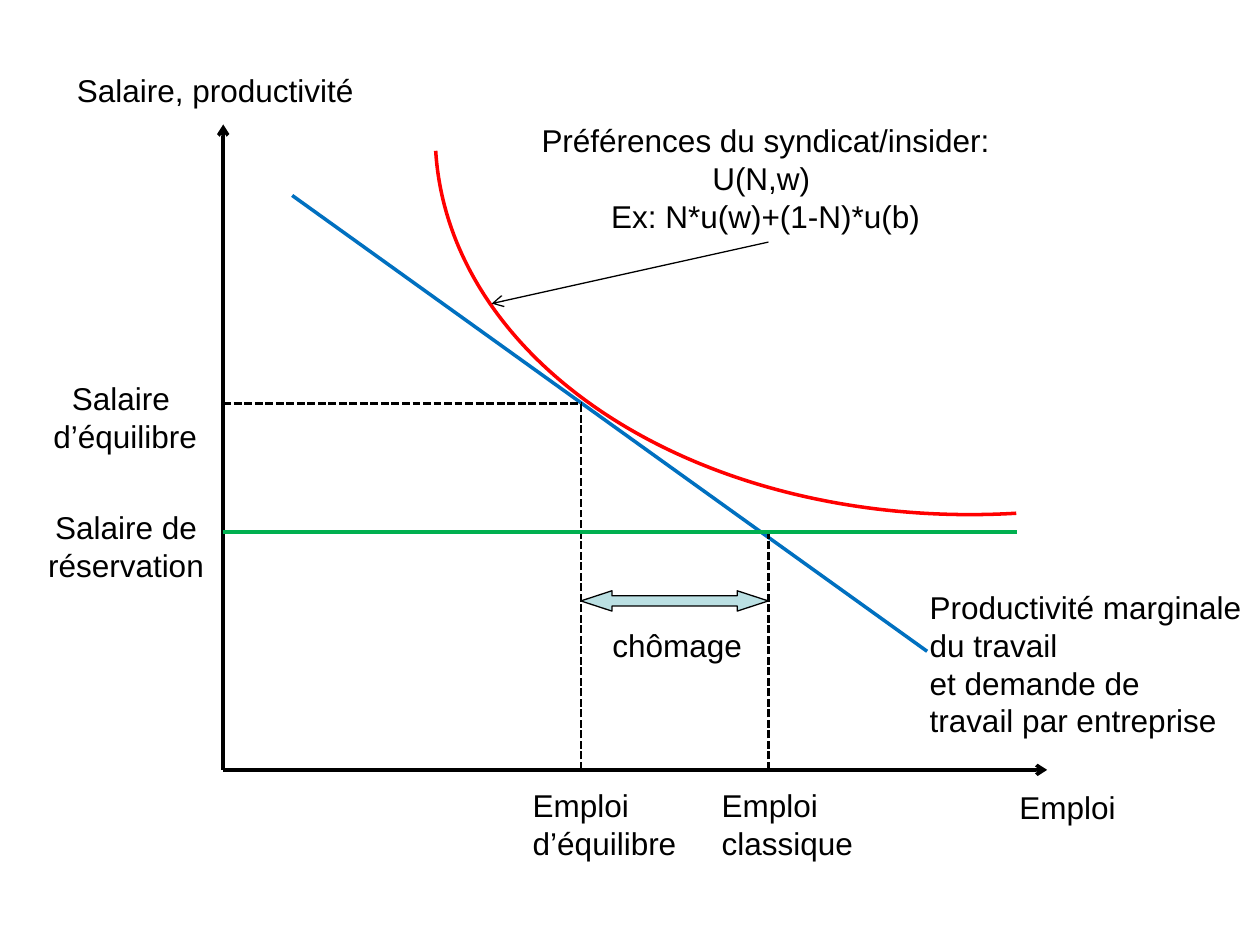
from dataclasses import dataclass

from lxml.etree import SubElement
from pptx import Presentation
from pptx.dml.color import RGBColor
from pptx.enum.dml import MSO_LINE
from pptx.enum.shapes import MSO_CONNECTOR, MSO_SHAPE
from pptx.enum.text import MSO_AUTO_SIZE, PP_ALIGN
from pptx.oxml.ns import qn
from pptx.util import Cm, Pt


@dataclass(frozen=True)
class Theme:
    ink: RGBColor = RGBColor(0, 0, 0)
    productivity: RGBColor = RGBColor(0x00, 0x70, 0xC0)
    preferences: RGBColor = RGBColor(0xFF, 0x00, 0x00)
    reservation: RGBColor = RGBColor(0x00, 0xB0, 0x50)
    unemployment: RGBColor = RGBColor(0xBB, 0xE0, 0xE3)
    font: str = "Arial"
    label_size: Pt = Pt(18)
    thick: Pt = Pt(2)
    dashed: Pt = Pt(1.5)
    thin: Pt = Pt(0.75)


theme = Theme()
deck = Presentation()
deck.slide_width, deck.slide_height = Cm(25.4), Cm(19.05)
page = deck.slides.add_slide(deck.slide_layouts[6])


def draw_line(start, end, color, width, dash=None, arrow=False):
    points = [Cm(value) for value in (*start, *end)]
    connector = page.shapes.add_connector(MSO_CONNECTOR.STRAIGHT, *points)
    connector.line.color.rgb = color
    connector.line.width = width
    if dash:
        connector.line.dash_style = dash
    properties = connector._element.spPr
    if arrow:
        SubElement(properties.find(qn("a:ln")), qn("a:tailEnd"), type="arrow")
    SubElement(properties, qn("a:effectLst"))


def draw_shape(kind, bounds, adjustments, color, width):
    shape = page.shapes.add_shape(kind, *[Cm(value) for value in bounds])
    shape.shadow.inherit = False
    for index, adjustment in enumerate(adjustments):
        shape.adjustments[index] = adjustment
    shape.line.color.rgb = color
    shape.line.width = width
    return shape


origin_x, origin_y = 4.5, 15.52
equilibrium_x, equilibrium_y = 11.71, 8.13
classical_x, reservation_y = 15.49, 10.72
reservation_end = 20.5

for axis_end in ((origin_x, 2.51), (21.11, origin_y)):
    draw_line((origin_x, origin_y), axis_end, theme.ink, theme.thick, arrow=True)

draw_line((5.89, 3.94), (18.69, 13.13), theme.productivity, theme.thick)

preference_curve = draw_shape(
    MSO_SHAPE.ARC, (8.76, -5.64, 22.5, 16), (162, 215.96), theme.preferences, theme.thick
)
preference_curve.fill.background()
preference_curve.rotation = 176.6

guides = [
    ((origin_x, equilibrium_y), (equilibrium_x, equilibrium_y)),
    ((equilibrium_x, origin_y), (equilibrium_x, equilibrium_y)),
    ((classical_x, origin_y), (classical_x, reservation_y)),
]
for start, end in guides:
    draw_line(start, end, theme.ink, theme.dashed, dash=MSO_LINE.SQUARE_DOT)

draw_line(
    (origin_x, reservation_y), (reservation_end, reservation_y), theme.reservation, theme.thick
)
draw_line((classical_x, 4.88), (9.91, 6.12), theme.ink, theme.thin, arrow=True)

unemployment_arrow = draw_shape(
    MSO_SHAPE.LEFT_RIGHT_ARROW,
    (equilibrium_x, 11.91, classical_x - equilibrium_x, 0.41),
    (0.5, 1.53),
    theme.ink,
    theme.thin,
)
unemployment_arrow.fill.solid()
unemployment_arrow.fill.fore_color.rgb = theme.unemployment

labels = [
    ("Emploi", (20.29, 15.77, 2.46, 1.02), PP_ALIGN.CENTER),
    ("Salaire, productivité", (1.3, 1.3, 6.1, 1.02), PP_ALIGN.LEFT),
    (
        "Productivité marginale\ndu travail\net demande de\ntravail par entreprise",
        (18.49, 11.73, 6.78, 3.3),
        PP_ALIGN.LEFT,
    ),
    ("Emploi\nclassique", (14.3, 15.72, 3.15, 1.8), PP_ALIGN.LEFT),
    ("Emploi\nd’équilibre", (10.49, 15.72, 3.43, 1.8), PP_ALIGN.LEFT),
    ("Salaire de\nréservation", (0.7, 10.12, 3.68, 1.8), PP_ALIGN.CENTER),
    ("Salaire \nd’équilibre", (0.81, 7.52, 3.43, 1.8), PP_ALIGN.CENTER),
    (
        "Préférences du syndicat/insider:\nU(N,w) \nEx: N*u(w)+(1-N)*u(b)",
        (10.62, 2.32, 9.63, 2.57),
        PP_ALIGN.CENTER,
    ),
    ("chômage", (12.09, 12.5, 3.12, 1.02), PP_ALIGN.CENTER),
]
for text, bounds, alignment in labels:
    box = page.shapes.add_textbox(*[Cm(value) for value in bounds])
    frame = box.text_frame
    frame.word_wrap = alignment == PP_ALIGN.LEFT
    frame.auto_size = MSO_AUTO_SIZE.SHAPE_TO_FIT_TEXT
    if frame.word_wrap:
        frame.margin_right = Cm(0)
    frame.text = text
    for para in frame.paragraphs:
        para.alignment = alignment
        para.font.name = theme.font
        para.font.size = theme.label_size
        para.font.color.rgb = theme.ink

deck.save("out.pptx")
